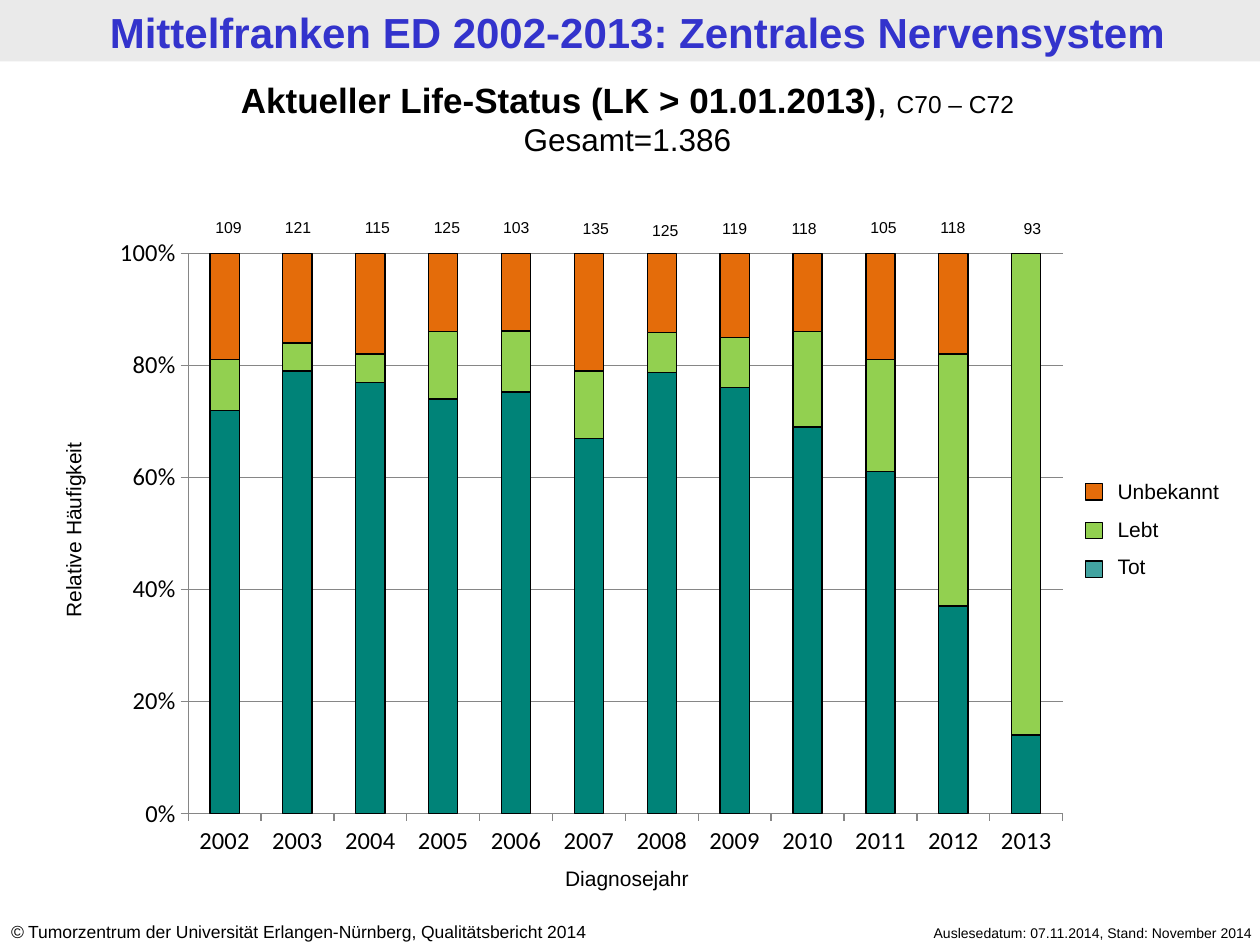
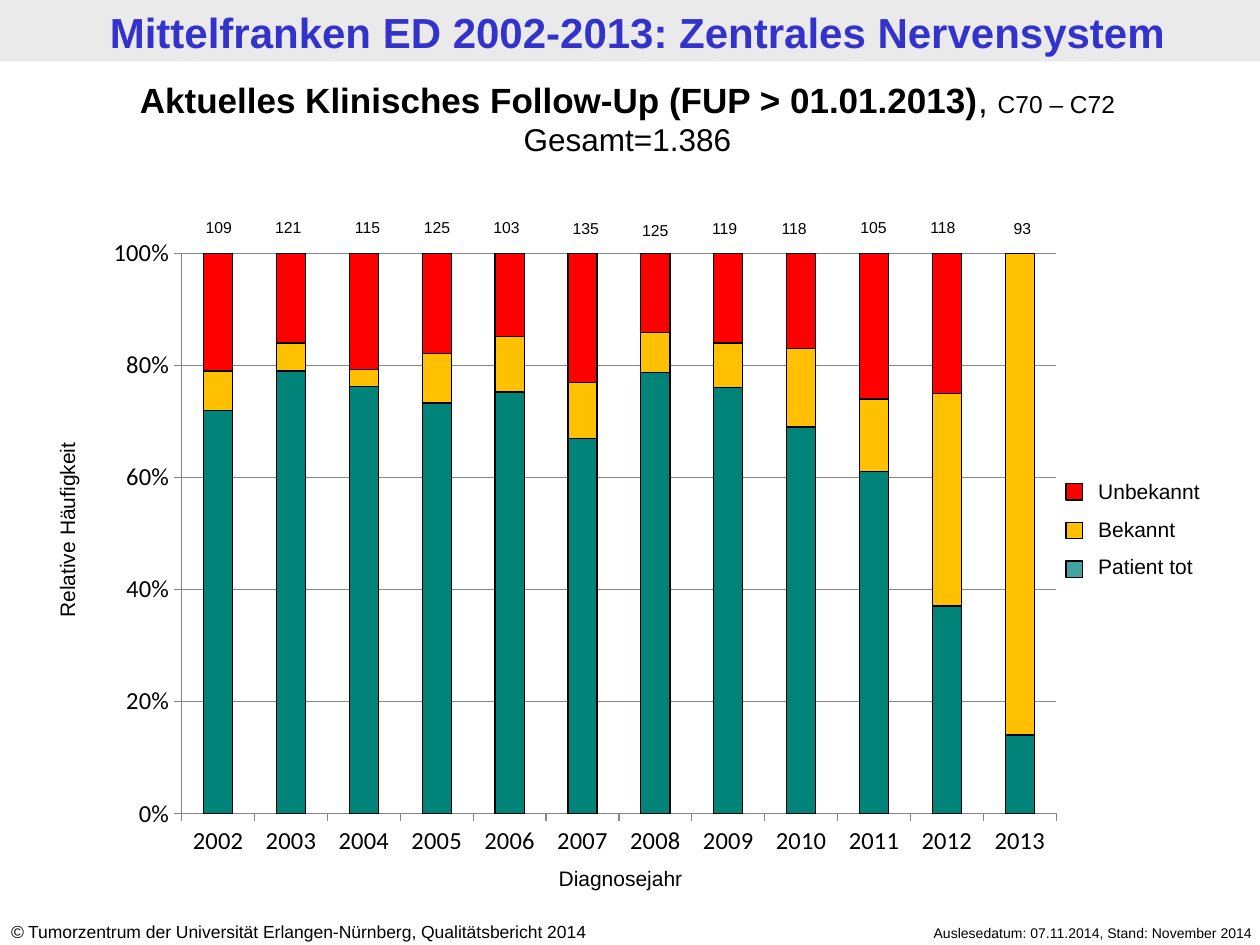
from dataclasses import dataclass

from lxml import etree
from pptx import Presentation
from pptx import util as u
from pptx.chart import data as cd
from pptx.dml import color as dc
from pptx.enum import chart as ch, shapes as sh, text as tx
from pptx.oxml import ns

HUES = {
    "ink": "000000", "band": "EAEAEA", "head": "3333CC", "grid": "868686",
    "teal": "008378", "key": "008380", "lime": "92D050", "rust": "E46C0A",
    "gold": "FFC000", "red": "FF0000",
}
ALIGN = {"l": tx.PP_ALIGN.LEFT, "c": tx.PP_ALIGN.CENTER, "r": tx.PP_ALIGN.RIGHT}
YEARS = [str(year) for year in range(2002, 2014)]
CASES = [109, 121, 115, 125, 103, 135, 125, 119, 118, 105, 118, 93]
TOPS = [4.27] * 5 + [4.29, 4.32, 4.29, 4.29, 4.27, 4.27, 4.29]
GAPS = (2, 5, 9, 11)
DEAD = (72, 79, 77, 74, 76, 67, 78, 76, 69, 61, 37, 14)


@dataclass(frozen=True)
class Box:
    left: float
    top: float
    width: float
    height: float

    def cm(self) -> tuple:
        return tuple(u.Cm(n) for n in (self.left, self.top, self.width, self.height))


@dataclass(frozen=True)
class State:
    label: str
    hue: str
    key: str
    vals: tuple


@dataclass(frozen=True)
class Page:
    head: str
    states: tuple
    shift: float
    count: float
    sign: float
    names: float


PAGES = (
    Page("Aktueller Life-Status (LK > 01.01.2013)", (
        State("Tot", "teal", "key", DEAD),
        State("Lebt", "lime", "lime", (9, 5, 5, 12, 11, 12, 7, 9, 17, 20, 45, 86)),
        State("Unbekannt", "rust", "rust", (19, 16, 18, 14, 14, 21, 14, 15, 14, 19, 18, 0)),
    ), 0, 3.91, 21.89, 22.28),
    Page("Aktuelles Klinisches Follow-Up (FUP > 01.01.2013)", (
        State("Patient tot", "teal", "key", DEAD),
        State("Bekannt", "gold", "gold", (7, 5, 3, 9, 10, 10, 7, 8, 14, 13, 38, 86)),
        State("Unbekannt", "red", "red", (21, 16, 21, 18, 15, 23, 14, 16, 17, 26, 25, 0)),
    ), -0.13, 3.71, 21.49, 21.89),
)


def tint(name: str) -> dc.RGBColor:
    return dc.RGBColor.from_string(HUES[name])


def paint(item, fill: str, line: str = "") -> None:
    item.fill.solid()
    item.fill.fore_color.rgb = tint(fill)
    if line:
        item.line.color.rgb = tint(line)
        item.line.width = u.Pt(0.75)
    else:
        item.line.fill.background()


def write(frame, words: str, *, size: float, hue: str = "ink", bold: bool = False,
          slant: bool = False, align: str = "l", gap: float = 0, fresh: bool = False) -> None:
    para = frame.add_paragraph() if fresh else frame.paragraphs[-1]
    para.alignment = ALIGN[align]
    para.space_before = u.Pt(gap)
    run = para.add_run()
    run.text = words
    font = run.font
    font.name, font.size, font.bold, font.italic = "Arial", u.Pt(size), bold, slant
    font.color.rgb = tint(hue)


def prep(shape):
    frame = shape.text_frame
    frame.word_wrap = True
    frame.auto_size = tx.MSO_AUTO_SIZE.NONE
    frame.vertical_anchor = tx.MSO_ANCHOR.TOP
    return frame


def label(slide, box: Box, words: str, turn: float = 0, **form):
    shape = slide.shapes.add_textbox(*box.cm())
    shape.rotation = turn
    frame = prep(shape)
    write(frame, words, **form)
    return frame


def block(slide, box: Box, fill: str, line: str = ""):
    shape = slide.shapes.add_shape(sh.MSO_SHAPE.RECTANGLE, *box.cm())
    shape.shadow.inherit = False
    paint(shape, fill, line)
    return shape


def base(slide) -> None:
    block(slide, Box(0, 0, 25.4, 1.24), "band")
    label(slide, Box(0.15, 0, 25.4, 1.24),
          "Mittelfranken ED 2002-2013: Zentrales Nervensystem",
          size=24, hue="head", bold=True, align="c")
    label(slide, Box(16.89, 18.52, 8.61, 0.61),
          "Auslesedatum: 07.11.2014, Stand: November 2014", size=8, align="r")
    foot = label(slide, Box(-0.03, 18.44, 13.31, 0.69), "©", size=10, slant=True)
    write(foot, " Tumorzentrum der Universität Erlangen-Nürnberg, Qualitätsbericht 2014", size=10)


def title(slide, head: str) -> None:
    shape = slide.shapes.title
    shape.left, shape.top, shape.width, shape.height = Box(-0.1, 1.45, 25.5, 1.88).cm()
    frame = prep(shape)
    write(frame, head, size=20, bold=True, align="c")
    write(frame, ", ", size=20, align="c")
    write(frame, "C70 – C72", size=14, align="c")
    write(frame, "Gesamt=1.386", size=18, align="c", fresh=True)


def place(chart) -> None:
    area = chart._chartSpace.chart.plotArea
    for old in area.findall(ns.qn("c:layout")):
        area.remove(old)
    outer = etree.Element(ns.qn("c:layout"))
    inner = etree.SubElement(outer, ns.qn("c:manualLayout"))
    rules = {"layoutTarget": "inner", "xMode": "edge", "yMode": "edge",
             "x": "0.09", "y": "0.043", "w": "0.89", "h": "0.87"}
    for name, val in rules.items():
        etree.SubElement(inner, ns.qn(f"c:{name}")).set("val", val)
    area.insert(0, outer)


def graph(slide, page: Page) -> None:
    data = cd.CategoryChartData()
    data.categories = YEARS
    for state in page.states:
        data.add_series(state.label, state.vals)
    box = Box(2.01 + page.shift, 4.55, 19.81, 12.98)
    chart = slide.shapes.add_chart(ch.XL_CHART_TYPE.COLUMN_STACKED_100, *box.cm(), data).chart
    chart.has_legend = chart.has_title = False
    chart.font.name, chart.font.size = "Calibri", u.Pt(18)
    chart.font.color.rgb = tint("ink")
    plot = chart.plots[0]
    plot.gap_width, plot.overlap, plot.vary_by_categories = 150, 100, False
    for row, state in zip(plot.series, page.states):
        paint(row.format, state.hue, "ink")
    for axis in (chart.category_axis, chart.value_axis):
        axis.major_tick_mark = ch.XL_TICK_MARK.OUTSIDE
        axis.tick_labels.font.size = u.Pt(14)
        axis.format.line.color.rgb = tint("grid")
    scale = chart.value_axis
    scale.minimum_scale, scale.maximum_scale, scale.major_unit = 0, 1, 0.2
    scale.tick_labels.number_format = "0%"
    scale.tick_labels.number_format_is_linked = False
    scale.has_major_gridlines = True
    scale.major_gridlines.format.line.color.rgb = tint("grid")
    place(chart)


def names(slide, page: Page) -> None:
    label(slide, Box(-1.57 + page.shift, 10.29, 6.12, 0.79), "Relative Häufigkeit",
          turn=270, size=12, align="c")
    label(slide, Box(9.78 + page.shift, 17.32, 5.72, 0.79), "Diagnosejahr",
          size=12, align="c")
    for i, (case, top) in enumerate(zip(CASES, TOPS)):
        left = page.count + 1.4 * i + 0.2 * sum(gap <= i for gap in GAPS)
        label(slide, Box(left, top, 1.4, 0.64), str(case), size=9, align="c")


def legend(slide, page: Page) -> None:
    states = page.states[::-1]
    frame = label(slide, Box(page.names, 9.53, 3.4, 2.31), states[0].label, size=12)
    for state in states[1:]:
        write(frame, state.label, size=12, gap=6.9, fresh=True)
    for i, state in enumerate(states):
        sign = block(slide, Box(page.sign, 9.75 + 0.78 * i, 0.33, 0.33), state.key, "ink")
        if state.key == "key":
            fill = sign._element.spPr.find(ns.qn("a:solidFill"))
            etree.SubElement(fill[0], ns.qn("a:alpha")).set("val", "74000")


def main() -> None:
    deck = Presentation()
    deck.slide_width, deck.slide_height = u.Cm(25.4), u.Cm(19.05)
    for page in PAGES:
        slide = deck.slides.add_slide(deck.slide_layouts[5])
        base(slide)
        title(slide, page.head)
        graph(slide, page)
        names(slide, page)
        legend(slide, page)
    deck.save("out.pptx")


if __name__ == "__main__":
    main()
